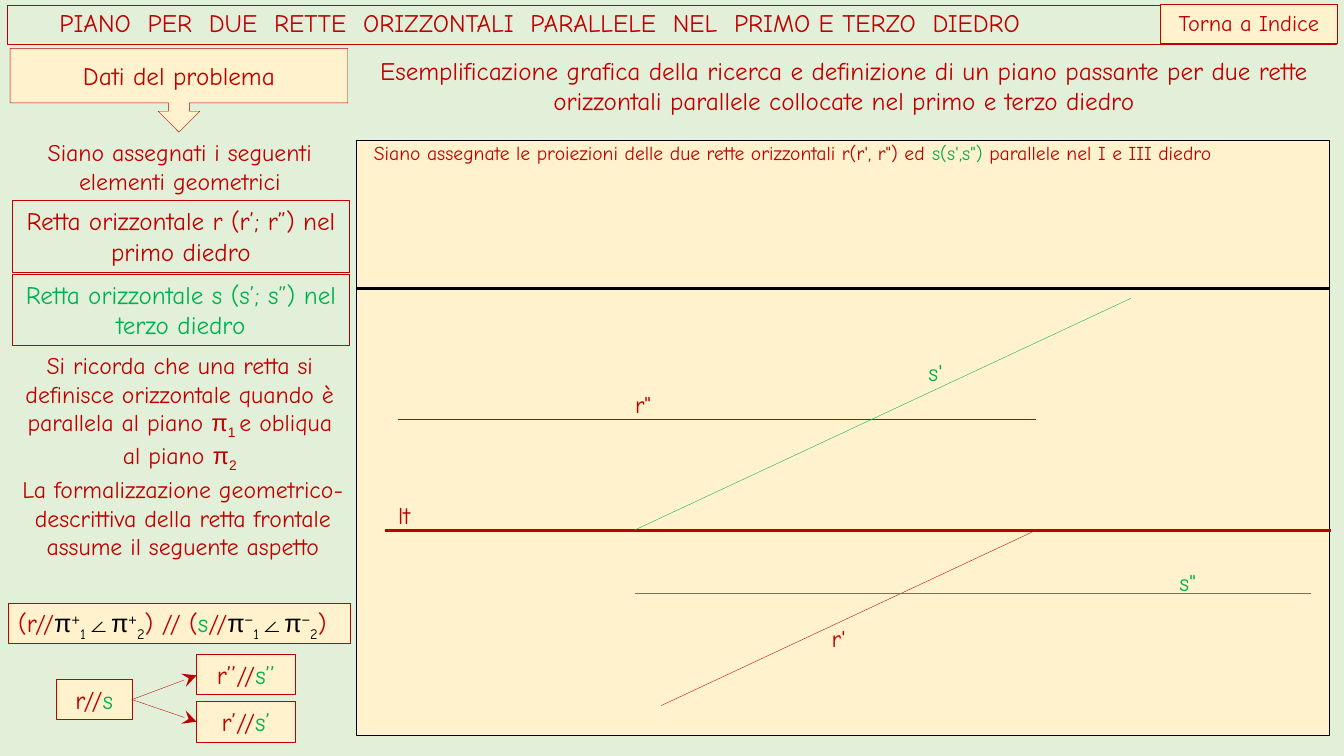
"""Build the slide on the plane through two parallel horizontal lines."""
import pptx
import pptx.util
import pptx.dml.color
import pptx.enum.shapes
import pptx.enum.text
import pptx.oxml

Pt = pptx.util.Pt
RGBColor = pptx.dml.color.RGBColor
SHAPE = pptx.enum.shapes.MSO_SHAPE
ALIGN = pptx.enum.text.PP_ALIGN
ANCHOR = pptx.enum.text.MSO_ANCHOR

RED = RGBColor(0xC0, 0x00, 0x00)
GREEN = RGBColor(0x00, 0xB0, 0x50)
BLACK = RGBColor(0x00, 0x00, 0x00)
CREAM = RGBColor(0xFF, 0xF2, 0xCC)
PALE_GREEN = RGBColor(0xE2, 0xF0, 0xD9)
HAND, SANS = "Comic Neue", "Arial"
SUPER, SUB = 30000, -25000

TITLE = "PIANO  PER  DUE  RETTE  ORIZZONTALI  PARALLELE  NEL  PRIMO E TERZO  DIEDRO"


def half_planes(sign):
    """Return the runs for a line parallel to plane 1 and oblique to plane 2."""
    return [("π", BLACK, SANS), (sign, BLACK, SANS, SUPER), ("1", BLACK, HAND, SUB),
            ("∠π", BLACK, SANS), (sign, BLACK, SANS, SUPER), ("2", BLACK, HAND, SUB)]


FORMULA = [("(r//",), *half_planes("+"), (") // (",), ("s", GREEN), ("//",),
           *half_planes("−"), (")",)]
REMINDER = [("Si ricorda che una retta si definisce orizzontale quando è parallela al piano ",),
            ("π", RED, SANS), ("1 ", RED, SANS, SUB), ("e obliqua al piano ",),
            ("π", RED, SANS), ("2", RED, SANS, SUB)]

# (left, top, width, height), runs, size
NOTES = [
    ((254.2, 36, 697, 51.1), [("Esemplificazione grafica della ricerca e definizione di un piano passante "
                               "per due rette orizzontali parallele collocate nel primo e terzo diedro",)], 18),
    ((5, 95, 247, 48.2), [("Siano assegnati i seguenti elementi geometrici",)], 17),
    ((5, 247, 247, 90), REMINDER, 17),
    ((7.2, 335.5, 247, 90), [("La formalizzazione geometrico-descrittiva della retta frontale "
                              "assume il seguente aspetto",)], 17),
]
BOXES = [
    ((828.7, 2.9, 126.7, 28.1), [("Torna a Indice",)], 16, CREAM, 0.25, ALIGN.CENTER),
    ((8.6, 143.3, 241.2, 51.1), [("Retta orizzontale r (r’; r”) nel primo diedro",)], 18, None, 0.75, ALIGN.CENTER),
    ((8.6, 195.9, 241.2, 51.1), [("Retta orizzontale s (s’; s”) nel terzo diedro", GREEN)], 18, None, 0.75,
     ALIGN.CENTER),
    ((40.3, 485.3, 54, 28.8), [("r//",), ("s", GREEN)], 18, CREAM, 0.25, ALIGN.CENTER),
    ((140.4, 467.3, 70.6, 28.8), [("r’’//",), ("s’’", GREEN)], 18, CREAM, 0.25, ALIGN.CENTER),
    ((140.4, 501.1, 70.6, 28.8), [("r’//",), ("s’", GREEN)], 18, CREAM, 0.25, ALIGN.CENTER),
    ((5.8, 430.6, 244.1, 28.8), FORMULA, 18, CREAM, 0.25, ALIGN.LEFT),
]
ARROWS = [((94.3, 499.7), (140.4, 482.4)), ((94.3, 499.7), (140.4, 515.5))]
CALLOUT = (7.2, 34.6, 241.2, 59.8)
PANEL = (254.9, 100.1, 694.8, 425.5)
LABELS = [
    ((267.1, 100.8, 672.5, 17.3), [("Siano assegnate le proiezioni delle due rette orizzontali r(r', r\") ed ",),
                                   ("s(s',s\") ", GREEN), ("parallele nel I e III diedro",)], 14),
    ((453.6, 278.6, 15.8, 21.6), [("r\"",)], 17),
    ((594, 445.7, 15.1, 21.6), [("r'",)], 17),
    ((842.4, 405.4, 15.8, 21.6), [("s\"", GREEN)], 17),
    ((663.1, 255.6, 15.1, 21.6), [("s'", GREEN)], 17),
    ((284.4, 357.8, 13, 21.6), [("lt",)], 17),
]
LINES = [
    ((949, 205.9), (254.9, 205.9), BLACK, 0),
    ((275, 378.7), (950.4, 378.7), RED, 0),
    ((284.4, 299.5), (740.2, 299.5), RED, 0.25),
    ((740.2, 378.7), (472.3, 504), RED, 0.25),
    ((453.6, 423.4), (936.7, 423.4), GREEN, 0.25),
    ((807.8, 213.1), (453.2, 378.7), GREEN, 0.25),
]


def write(shape, runs, size, align=ALIGN.CENTER, anchor=ANCHOR.TOP, wrap=True):
    """Put one formatted paragraph in a shape and return it."""
    frame = shape.text_frame
    frame.word_wrap = wrap
    frame.auto_size = pptx.enum.text.MSO_AUTO_SIZE.NONE
    frame.vertical_anchor = anchor
    paragraph = frame.paragraphs[0]
    paragraph.alignment = align
    paragraph.font.size = Pt(size)
    styles = [(*run[1:], *(RED, HAND, 0)[len(run) - 1:]) for run in runs]
    uniform = len(set(styles)) == 1
    for (text, *_), (color, face, baseline) in zip(runs, styles):
        run = paragraph.add_run()
        run.text = text
        font = paragraph.font if uniform else run.font
        font.name = face
        font.color.rgb = color
        if baseline:
            run.font._element.set("baseline", str(baseline))
    return paragraph


def outline(shape, fill, color, weight):
    """Give a shape its fill and line."""
    if fill is None:
        shape.fill.background()
    else:
        shape.fill.solid()
        shape.fill.fore_color.rgb = fill
    shape.line.color.rgb = color
    shape.line.width = Pt(weight)


def add_box(slide, preset, area, fill, color, weight):
    """Add a preset shape without shadow."""
    shape = slide.shapes.add_shape(preset, *map(Pt, area))
    shape.shadow.inherit = False
    outline(shape, fill, color, weight)
    return shape


def add_line(slide, start, end, color, weight, arrow=False):
    """Add a straight line, with an arrowhead at its end if asked."""
    line = slide.shapes.add_connector(pptx.enum.shapes.MSO_CONNECTOR.STRAIGHT, *map(Pt, start + end))
    line.line.color.rgb = color
    line.line.width = Pt(weight)
    properties = line._element.spPr
    if arrow:
        head = pptx.oxml.ns.qn("a:tailEnd")
        line.line._get_or_add_ln().append(properties.makeelement(head, {"type": "stealth", "w": "lg", "len": "lg"}))
    properties.append(properties.makeelement(pptx.oxml.ns.qn("a:effectLst"), {}))


def main():
    """Draw the slide and save it."""
    presentation = pptx.Presentation()
    presentation.slide_width, presentation.slide_height = Pt(960), Pt(540)
    slide = presentation.slides.add_slide(presentation.slide_layouts[5])
    slide.background.fill.solid()
    slide.background.fill.fore_color.rgb = PALE_GREEN

    title = slide.shapes.title
    title.left, title.top, title.width, title.height = map(Pt, (5, 3.6, 949.7, 28.1))
    outline(title, None, RED, 0.25)
    heading = write(title, [(TITLE,)], 18, ALIGN.LEFT, ANCHOR.MIDDLE)
    heading.line_spacing = 0.9
    title.text_frame.margin_left = Pt(37.5)

    callout = add_box(slide, SHAPE.DOWN_ARROW_CALLOUT, CALLOUT, CREAM, RED, 0.25)
    write(callout, [("Dati del problema",)], 18, anchor=ANCHOR.MIDDLE)
    for area, runs, size, fill, weight, align in BOXES:
        write(add_box(slide, SHAPE.RECTANGLE, area, fill, RED, weight), runs, size, align)
    for area, runs, size in NOTES:
        write(slide.shapes.add_textbox(*map(Pt, area)), runs, size)
    for start, end in ARROWS:
        add_line(slide, start, end, RED, 0.25, arrow=True)

    add_box(slide, SHAPE.RECTANGLE, PANEL, CREAM, BLACK, 0)
    for area, runs, size in LABELS:
        label = slide.shapes.add_textbox(*map(Pt, area))
        write(label, runs, size, ALIGN.LEFT, wrap=False)
        frame = label.text_frame
        frame.margin_left = frame.margin_top = frame.margin_right = frame.margin_bottom = 0
    for start, end, color, weight in LINES:
        add_line(slide, start, end, color, weight)
    presentation.save("out.pptx")


if __name__ == "__main__":
    main()
